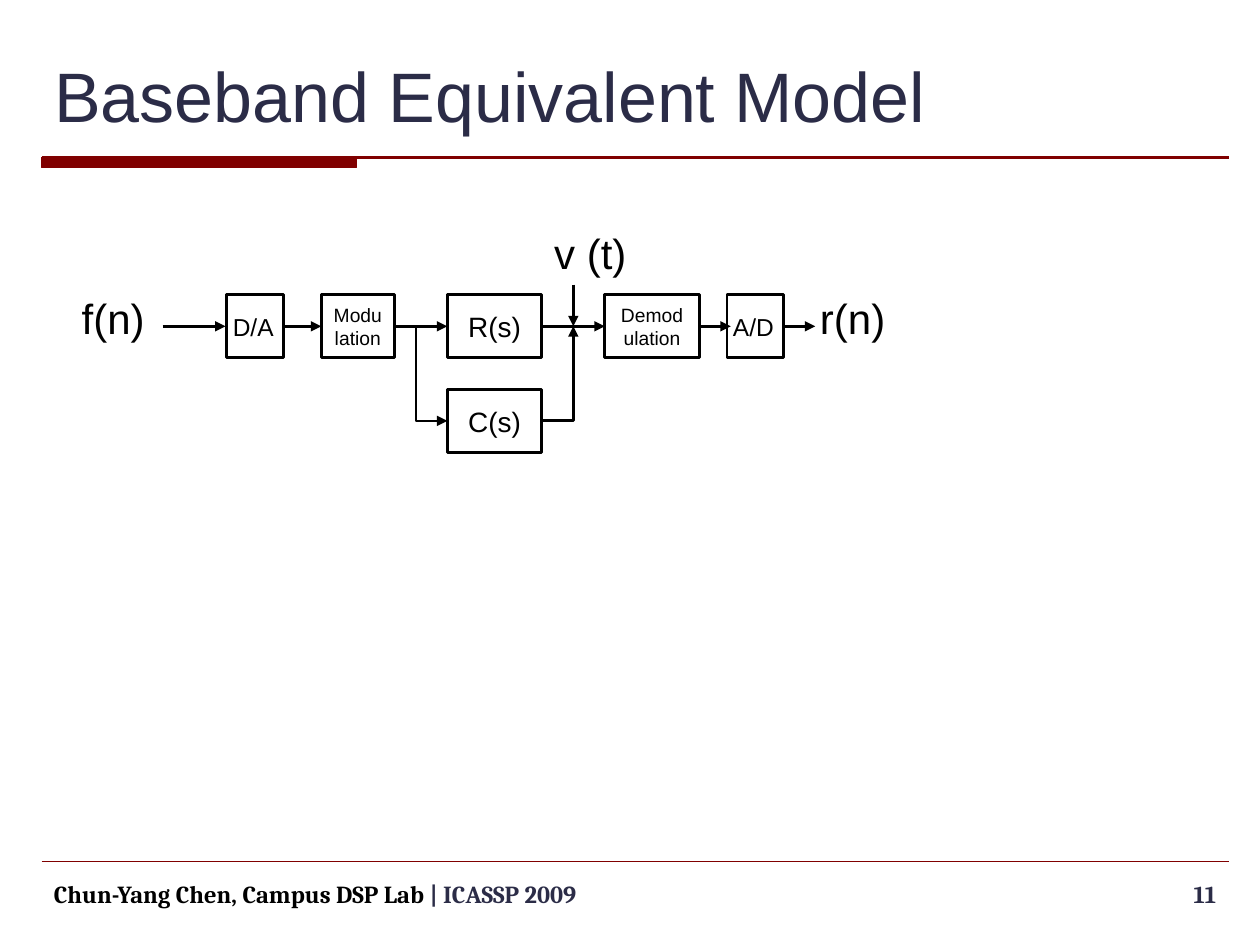
from lxml.etree import SubElement
from pptx import Presentation
from pptx.dml.color import RGBColor
from pptx.enum.shapes import MSO_CONNECTOR as LinkType, MSO_SHAPE as Preset
from pptx.enum.text import MSO_ANCHOR as Anchor, MSO_AUTO_SIZE as Fit, PP_ALIGN as Align
from pptx.oxml.ns import qn
from pptx.util import Inches, Pt

COLORS = {"navy": "2B2C47", "maroon": "800000", "black": "000000", "white": "FFFFFF"}
COLORS = {name: RGBColor.from_string(value) for name, value in COLORS.items()}
ROW_Y = 2.59
LOWER_Y = 3.34
BOX_HEIGHT = 0.5


def write(shape, spans, size, font="Arial", align=Align.LEFT, anchor=Anchor.TOP,
          wrap=True, bold=False):
    """Fill a shape with one paragraph of (text, color name) spans."""
    frame = shape.text_frame
    frame.auto_size = Fit.NONE
    frame.word_wrap = wrap
    frame.vertical_anchor = anchor
    para = frame.paragraphs[0]
    para.alignment = align
    for text, color in spans:
        span = para.add_run()
        span.text = text
        for name, value in {"name": font, "size": Pt(size), "bold": bold}.items():
            setattr(span.font, name, value)
        span.font.color.rgb = COLORS[color]


def connect(kind, start, end, color="black", width=1.5, arrow=True):
    ends = [Inches(length) for length in (*start, *end)]
    link = page.shapes.add_connector(kind, *ends)
    link.line.color.rgb = COLORS[color]
    link.line.width = Pt(width)
    if arrow:
        SubElement(link.line._get_or_add_ln(), qn("a:tailEnd"), type="triangle")
    properties = link._element.spPr
    SubElement(properties, qn("a:effectLst"))
    # Without the theme style only the line format set here applies
    link._element.remove(link._element.find(qn("p:style")))
    if kind == LinkType.ELBOW:
        properties.find(qn("a:prstGeom")).set("prst", "bentConnector2")
    return link


deck = Presentation()
deck.slide_width, deck.slide_height = Inches(10), Inches(7.5)
page = deck.slides.add_slide(deck.slide_layouts[5])

# Rules and title
for y, width in [(1.25, 1.5), (6.84, 0.75)]:
    connect(LinkType.STRAIGHT, (0.33, y), (9.75, y), "maroon", width, arrow=False)
accent = page.shapes.add_shape(Preset.RECTANGLE, Inches(0.33), Inches(1.25),
                               Inches(2.5), Inches(0.08))
accent.shadow.inherit = False
accent.fill.solid()
accent.fill.fore_color.rgb = COLORS["maroon"]
accent.line.color.rgb = COLORS["maroon"]
accent.line.width = Pt(0.75)

title = page.shapes.title
title.left, title.top = Inches(0.33), Inches(0.25)
title.width, title.height = Inches(9.42), Inches(1)
write(title, [("Baseband Equivalent Model", "navy")], 40, anchor=Anchor.MIDDLE)

# Footer
footers = [
    (8.7, 1.05, Align.RIGHT, [("11", "navy")]),
    (0.33, 8.29, Align.LEFT,
     [("Chun-Yang Chen, Campus DSP Lab ", "black"), ("| ICASSP 2009", "navy")]),
]
for left, width, align, spans in footers:
    box = page.shapes.add_textbox(Inches(left), Inches(6.93), Inches(width), Inches(0.29))
    write(box, spans, 14, "Cambria", align, bold=True)

# Blocks: left, centre line, width, label, size
blocks = [
    (1.8, ROW_Y, 0.45, "", 14),
    (2.55, ROW_Y, 0.58, "Modulation", 11),
    (3.55, ROW_Y, 0.75, "R(s)", 16),
    (3.55, LOWER_Y, 0.75, "C(s)", 16),
    (4.8, ROW_Y, 0.75, "Demodulation", 11),
    (5.77, ROW_Y, 0.45, "", 14),
]
for left, middle, width, label, size in blocks:
    block = page.shapes.add_shape(Preset.RECTANGLE, Inches(left),
                                  Inches(middle - BOX_HEIGHT / 2),
                                  Inches(width), Inches(BOX_HEIGHT))
    block.shadow.inherit = False
    block.fill.solid()
    block.fill.fore_color.rgb = COLORS["white"]
    block.line.color.rgb = COLORS["black"]
    block.line.width = Pt(1.5)
    if label:
        write(block, [(label, "black")], size, align=Align.CENTER, anchor=Anchor.MIDDLE)
        # Slim side margins let the label break into two lines
        for side in ("margin_left", "margin_right"):
            setattr(block.text_frame, side, Inches(0.09))

# Signal flow
flows = [(1.29, 1.79), (2.24, 2.55), (3.13, 3.55), (4.3, 4.8), (5.55, 5.8), (6.22, 6.47)]
for start, end in flows:
    connect(LinkType.STRAIGHT, (start, ROW_Y), (end, ROW_Y))
connect(LinkType.STRAIGHT, (4.55, 2.26), (4.55, ROW_Y))
connect(LinkType.ELBOW, (4.3, LOWER_Y), (4.55, ROW_Y))
# The branch runs down first, so its elbow is turned by 270 degrees
branch = connect(LinkType.ELBOW, (3.8, 2.84), (3.05, 3.09))
branch._element.spPr.find(qn("a:xfrm")).set("rot", str(270 * 60000))

# Signal names and converter labels
labels = [
    (4.3, 1.76, 0.75, 0.51, "v (t)", 24, Align.LEFT),
    (0.55, 2.27, 0.71, 0.51, "f(n)", 24, Align.LEFT),
    (6.41, 2.27, 0.73, 0.51, "r(n)", 24, Align.LEFT),
    (1.74, 2.43, 0.54, 0.34, "D/A", 14, Align.CENTER),
    (5.71, 2.43, 0.54, 0.34, "A/D", 14, Align.CENTER),
]
for *place, text, size, align in labels:
    box = page.shapes.add_textbox(*[Inches(length) for length in place])
    write(box, [(text, "black")], size, align=align, wrap=False)

deck.save("out.pptx")
